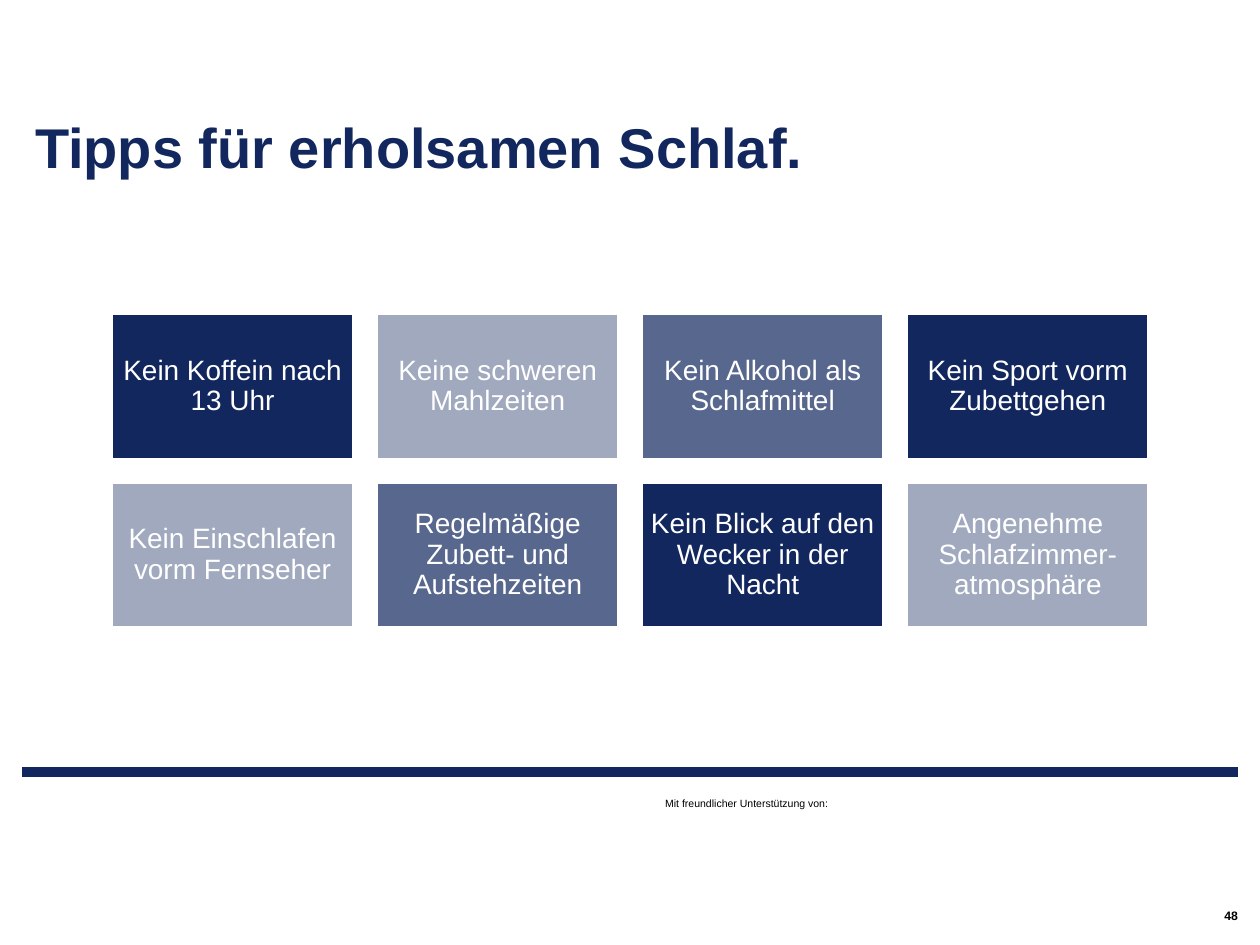
import pptx
import pptx.util
import pptx.dml.color
import pptx.enum.shapes
import pptx.enum.text
import pptx.oxml

Pt = pptx.util.Pt
Align = pptx.enum.text.PP_ALIGN
Anchor = pptx.enum.text.MSO_ANCHOR

HUES = {"navy": "11275D", "pale": "A0A9BE", "slate": "58678D",
        "white": "FFFFFF", "black": "000000"}
TIPS = [
    "Kein Koffein nach 13 Uhr",
    "Keine schweren Mahlzeiten",
    "Kein Alkohol als Schlafmittel",
    "Kein Sport vorm Zubettgehen",
    "Kein Einschlafen vorm Fernseher",
    "Regelmäßige Zubett- und Aufstehzeiten",
    "Kein Blick auf den Wecker in der Nacht",
    "Angenehme Schlafzimmer-atmosphäre",
]
COLS = 4


class Deck:
    """Holds the style and the current slide."""

    face = "Arial"

    def __init__(self, wide, high):
        self.prs = pptx.Presentation()
        self.prs.slide_width, self.prs.slide_height = Pt(wide), Pt(high)
        self.slide = self.prs.slides.add_slide(self.prs.slide_layouts[5])

    def hue(self, name):
        return pptx.dml.color.RGBColor.from_string(HUES[name])

    def fit(self, shape, text, size, hue, pad, bold=False,
            anchor=Anchor.MIDDLE, align=Align.LEFT, lead=1.0):
        frame = shape.text_frame
        frame.text = text
        para = frame.paragraphs[0]
        left, top = Pt(pad[0]), Pt(pad[1])
        formats = [
            (frame, {"word_wrap": True, "vertical_anchor": anchor,
                     "auto_size": pptx.enum.text.MSO_AUTO_SIZE.NONE,
                     "margin_left": left, "margin_right": left,
                     "margin_top": top, "margin_bottom": top}),
            (para, {"alignment": align, "line_spacing": lead}),
            (para.runs[0].font, {"name": self.face, "size": Pt(size),
                                 "bold": bold}),
        ]
        for item, values in formats:
            for key, value in values.items():
                setattr(item, key, value)
        para.runs[0].font.color.rgb = self.hue(hue)

    def title(self, text, box, **style):
        shape = self.slide.shapes.title
        for key, value in zip(("left", "top", "width", "height"), box):
            setattr(shape, key, Pt(value))
        self.fit(shape, text, **style)

    def label(self, text, box, **style):
        shape = self.slide.shapes.add_textbox(*map(Pt, box))
        self.fit(shape, text, **style)

    def tile(self, text, box, fill, **style):
        kind = pptx.enum.shapes.MSO_SHAPE.RECTANGLE
        shape = self.slide.shapes.add_shape(kind, *map(Pt, box))
        shape.shadow.inherit = False
        shape.fill.solid()
        shape.fill.fore_color.rgb = self.hue(fill)
        shape.line.color.rgb = self.hue("white")
        shape.line.width = Pt(1)
        self.fit(shape, text, **style)

    def rule(self, ends, hue, width):
        kind = pptx.enum.shapes.MSO_CONNECTOR.STRAIGHT
        line = self.slide.shapes.add_connector(kind, *map(Pt, ends))
        line.line.color.rgb = self.hue(hue)
        line.line.width = Pt(width)
        props = line._element.spPr
        props.append(props.makeelement(pptx.oxml.ns.qn("a:effectLst"), {}))


def main():
    deck = Deck(720, 540)

    # Heading
    deck.title("Tipps für erholsamen Schlaf.", (12.8, 28, 693.5, 75.5),
               size=32, hue="navy", pad=(7.2, 0), bold=True,
               anchor=Anchor.BOTTOM, lead=0.9)

    # Grid of tips, fills taken in turn
    wide, high, gap = 137.7, 82.6, 13.77
    fills = ("navy", "pale", "slate")
    for num, tip in enumerate(TIPS):
        row, col = divmod(num, COLS)
        box = (64.1 + col * (wide + gap), 179.5 + row * (high + gap),
               wide, high)
        deck.tile(tip, box, fills[num % len(fills)], size=16, hue="white",
                  pad=(4.8, 4.8), align=Align.CENTER, lead=0.9)

    # Footer
    deck.rule((12.8, 441.2, 707.2, 441.2), "navy", 5.67)
    deck.label("Mit freundlicher Unterstützung von:", (373, 452, 146, 14.5),
               size=6, hue="black", pad=(7.2, 3.6), anchor=Anchor.TOP)
    deck.label("48", (464.2, 517.7, 243.2, 11.5), size=7, hue="black",
               pad=(0, 0), bold=True, align=Align.RIGHT)

    deck.prs.save("out.pptx")


if __name__ == "__main__":
    main()
